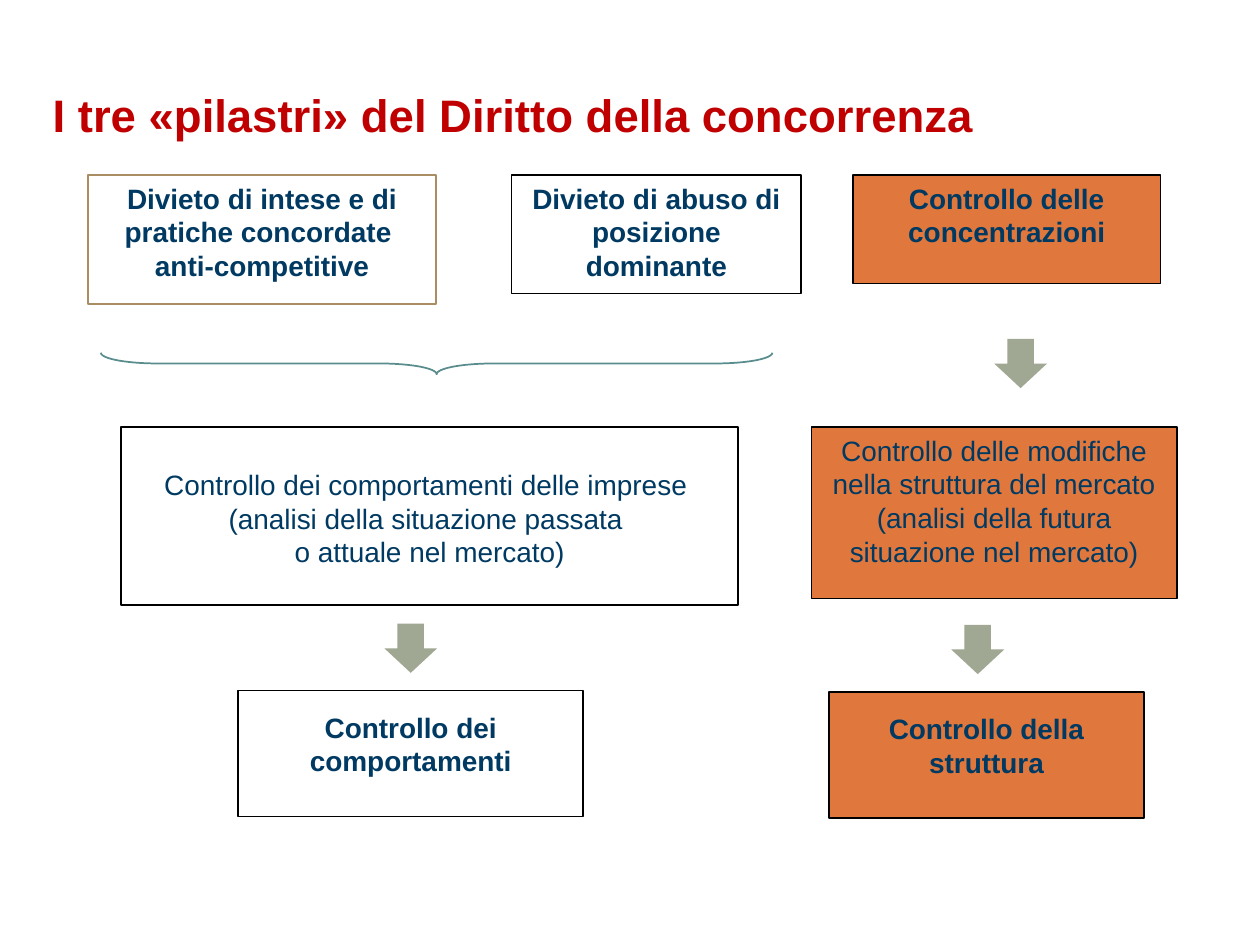
from pptx import Presentation
from pptx.dml.color import RGBColor
from pptx.enum import shapes, text
from pptx.util import Inches, Pt

RED = RGBColor(0xC0, 0x00, 0x00)
NAVY = RGBColor(0x00, 0x3A, 0x62)
ORANGE = RGBColor(0xE0, 0x77, 0x3C)
WHITE = RGBColor(0xFF, 0xFF, 0xFF)
BLACK = RGBColor(0x00, 0x00, 0x00)
TAN = RGBColor(0xA9, 0x8D, 0x63)
TEAL = RGBColor(0x59, 0x8C, 0x8C)
SAGE = RGBColor(0xA0, 0xA7, 0x93)

TOP, MIDDLE, BOTTOM = (text.MSO_ANCHOR.TOP, text.MSO_ANCHOR.MIDDLE,
                       text.MSO_ANCHOR.BOTTOM)

deck = Presentation()
deck.slide_width, deck.slide_height = Inches(10), Inches(7.5)
page = deck.slides.add_slide(deck.slide_layouts[6])


def write(box, lines, size=16, color=NAVY, bold=False, anchor=TOP,
          align=text.PP_ALIGN.CENTER, top=0.05, bottom=0.05):
    """Fill a box with one paragraph per line."""
    frame = box.text_frame
    frame.word_wrap = True
    frame.vertical_anchor = anchor
    frame.margin_top, frame.margin_bottom = Inches(top), Inches(bottom)
    for number, line in enumerate(lines):
        para = frame.paragraphs[0] if number == 0 else frame.add_paragraph()
        para.alignment = align
        span = para.add_run()
        span.text = line
        span.font.name = "Arial"
        span.font.size = Pt(size)
        span.font.bold = bold
        span.font.color.rgb = color


def draw(kind, place, fill=None, line=None, width=1):
    """Add a preset shape without shadow; None means no fill or no line."""
    shape = page.shapes.add_shape(kind, *[Inches(value) for value in place])
    shape.shadow.inherit = False
    if fill is None:
        shape.fill.background()
    else:
        shape.fill.solid()
        shape.fill.fore_color.rgb = fill
    if line is None:
        shape.line.fill.background()
    else:
        shape.line.color.rgb = line
        shape.line.width = Pt(width)
    return shape


# Title
title = page.shapes.add_textbox(Inches(0.32), Inches(0.44), Inches(8.94), Inches(0.94))
write(title, ["I tre «pilastri» del Diritto della concorrenza"], size=26,
      color=RED, bold=True, anchor=MIDDLE, align=text.PP_ALIGN.LEFT)

# Boxes: place, fill, line colour, line width, lines of text, text format
pillar = dict(bold=True)
analysis = dict(top=0.32)
outcome = dict(bold=True, anchor=BOTTOM, bottom=0.31)
boxes = [
    # The three pillars
    ((0.7, 1.39, 2.76, 1.02), WHITE, TAN, 1.25,
     ["Divieto di intese e di pratiche concordate ", "anti-competitive"], pillar),
    ((4.06, 1.39, 2.3, 0.94), None, BLACK, 1,
     ["Divieto di abuso di posizione dominante"], pillar),
    ((6.77, 1.39, 2.44, 0.86), ORANGE, BLACK, 1,
     ["Controllo delle concentrazioni"], pillar),
    # What is analysed
    ((0.96, 3.39, 4.9, 1.41), None, BLACK, 1,
     ["Controllo dei comportamenti delle imprese ",
      "(analisi della situazione passata ", "o attuale nel mercato)"], analysis),
    ((6.44, 3.39, 2.9, 1.36), ORANGE, BLACK, 1,
     ["Controllo delle modifiche nella struttura del mercato "
      "(analisi della futura situazione nel mercato)"], {}),
    # Kind of control
    ((1.89, 5.48, 2.74, 1), None, BLACK, 1,
     ["Controllo dei comportamenti"], outcome),
    ((6.58, 5.49, 2.5, 1), ORANGE, BLACK, 1,
     ["Controllo della struttura"], outcome),
]
for place, fill, line, width, lines, style in boxes:
    box = draw(shapes.MSO_SHAPE.RECTANGLE, place, fill, line, width)
    write(box, lines, **style)

# Brace joining the first two pillars, turned to point down
brace = draw(shapes.MSO_SHAPE.RIGHT_BRACE, (3.38, 0.22, 0.17, 5.33), line=TEAL)
brace.rotation = 90
brace.adjustments[0] = 2.67
brace.adjustments[1] = 0.5

# Down arrows between the rows
for left, top in [(7.89, 2.69), (3.05, 4.95), (7.55, 4.96)]:
    draw(shapes.MSO_SHAPE.DOWN_ARROW, (left, top, 0.42, 0.39), fill=SAGE)

deck.save("out.pptx")
